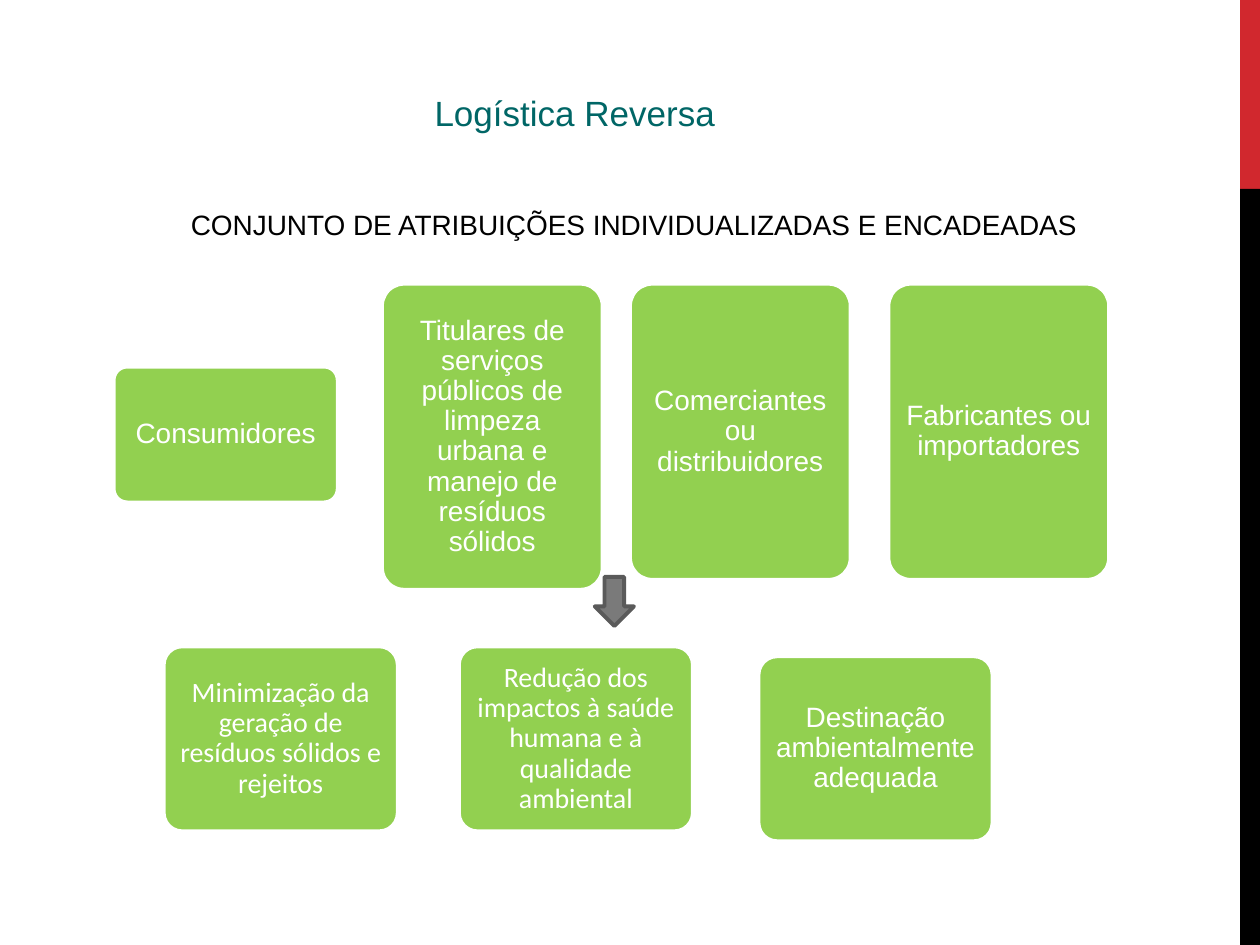
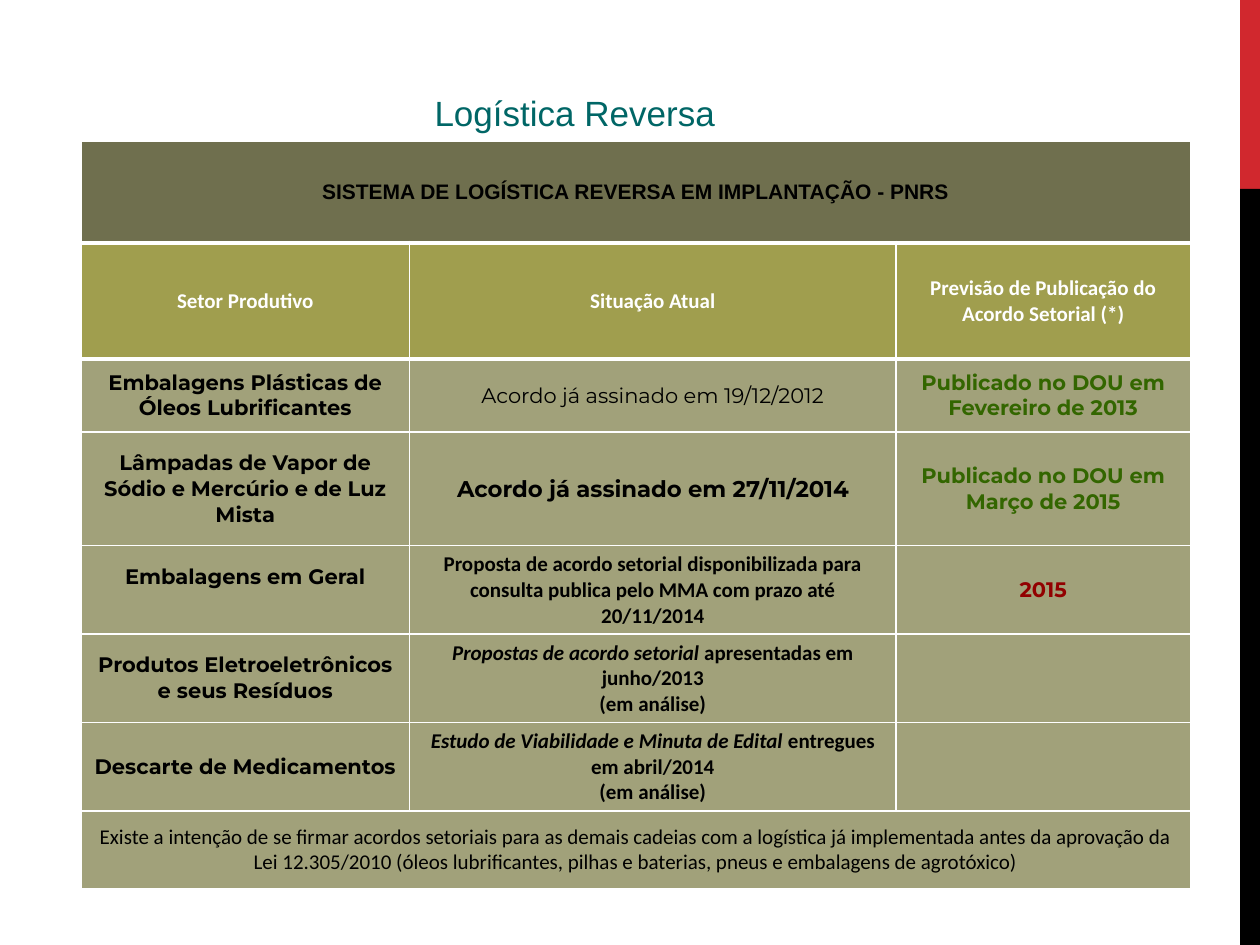
from dataclasses import dataclass

from lxml.etree import SubElement
from pptx import Presentation
from pptx.dml.color import RGBColor
from pptx.enum.shapes import MSO_SHAPE
from pptx.enum.text import MSO_ANCHOR, PP_ALIGN
from pptx.oxml.ns import qn
from pptx.presentation import Presentation as Deck
from pptx.slide import Slide
from pptx.util import Cm, Pt

WHITE = RGBColor(0xFF, 0xFF, 0xFF)
BLACK = RGBColor(0x00, 0x00, 0x00)
RED = RGBColor(0xD1, 0x28, 0x2E)
TEAL = RGBColor(0x00, 0x66, 0x66)
LIME = RGBColor(0x92, 0xD0, 0x50)
ARROW_GREY = RGBColor(0x7A, 0x7A, 0x7A)
ARROW_EDGE = RGBColor(0x5A, 0x5A, 0x5A)
BANNER = RGBColor(0x6F, 0x6F, 0x4E)
HEADER = RGBColor(0xA0, 0x9E, 0x4E)
BODY = RGBColor(0xA1, 0xA1, 0x7A)
PUBLISHED = RGBColor(0x33, 0x66, 0x00)
PENDING = RGBColor(0x92, 0x00, 0x00)

ARIAL, CALIBRI, MONTSERRAT = "Arial", "Calibri", "Montserrat"
SLIDE_WIDTH, SLIDE_HEIGHT = 25.4, 19.05
BAND_LEFT, BAND_SPLIT = 25, 3.81


@dataclass(frozen=True)
class Area:
    """A rectangle in centimetres."""

    left: float
    top: float
    width: float
    height: float

    def lengths(self) -> tuple:
        """Return the four lengths that python-pptx expects."""
        return Cm(self.left), Cm(self.top), Cm(self.width), Cm(self.height)


@dataclass(frozen=True)
class Span:
    """A stretch of text with its format."""

    text: str
    font: str = MONTSERRAT
    color: RGBColor = BLACK
    size: float = 12
    bold: bool = True
    italic: bool = False


@dataclass(frozen=True)
class Card:
    """A green rounded card."""

    area: Area
    text: str
    font: str = ARIAL


@dataclass(frozen=True)
class Entry:
    """A table cell: paragraphs made of spans, and its bottom margin."""

    paras: tuple = ()
    bottom: float = 0.13


CHAIN_TOP, CHAIN_WIDTH, CHAIN_HEIGHT = 5.72, 4.45, 5.97
RESULT_TOP, RESULT_WIDTH, RESULT_HEIGHT = 13.03, 4.72, 3.73

CARDS = (
    Card(Area(2.29, 7.39, 4.52, 2.74), "Consumidores"),
    Card(
        Area(7.7, CHAIN_TOP, CHAIN_WIDTH, 6.17),
        "Titulares de serviços públicos de limpeza urbana e manejo de resíduos sólidos",
    ),
    Card(Area(12.7, CHAIN_TOP, CHAIN_WIDTH, CHAIN_HEIGHT), "Comerciantes ou distribuidores"),
    Card(Area(17.91, CHAIN_TOP, CHAIN_WIDTH, CHAIN_HEIGHT), "Fabricantes ou importadores"),
    Card(
        Area(3.3, RESULT_TOP, RESULT_WIDTH, RESULT_HEIGHT),
        "Minimização da geração de resíduos sólidos e rejeitos",
        CALIBRI,
    ),
    Card(
        Area(9.25, RESULT_TOP, RESULT_WIDTH, RESULT_HEIGHT),
        "Redução dos impactos à saúde humana e à qualidade ambiental",
        CALIBRI,
    ),
    Card(
        Area(15.29, RESULT_TOP + 0.2, RESULT_WIDTH, RESULT_HEIGHT),
        "Destinação ambientalmente adequada",
    ),
)


def single(text: str, bottom: float = 0.13, **style) -> Entry:
    """Return a cell entry with one span."""
    return Entry(((Span(text, **style),),), bottom)


def analysis(subject: str, rest: str) -> Entry:
    """Return the status of a sector that is still being analysed."""
    return Entry((
        (Span(subject, CALIBRI, italic=True), Span(rest, CALIBRI)),
        (Span("(em análise)", CALIBRI),),
    ))


COLUMN_WIDTHS = (6.63, 9.8, 5.94)
ROW_HEIGHTS = (2.06, 2.34, 1.47, 2.29, 1.78, 1.78, 1.78, 1.57)
ROW_FILLS = (BANNER, HEADER) + (BODY,) * 6
RULE_WIDTHS = (1, 3, 3, 1, 1, 1, 1, 1, 1)
ROWS = (
    (single("SISTEMA DE LOGÍSTICA REVERSA EM IMPLANTAÇÃO - PNRS", font=ARIAL),),
    tuple(
        single(label, font=CALIBRI, color=WHITE)
        for label in (
            "Setor Produtivo",
            "Situação Atual",
            "Previsão de Publicação do Acordo Setorial (*)",
        )
    ),
    (
        single("Embalagens Plásticas de Óleos Lubrificantes"),
        single("Acordo já assinado em 19/12/2012", bold=False),
        single("Publicado no DOU em Fevereiro de 2013", color=PUBLISHED),
    ),
    (
        single("Lâmpadas de Vapor de Sódio e Mercúrio e de Luz Mista"),
        single("Acordo já assinado em 27/11/2014", size=13),
        single("Publicado no DOU em Março de 2015", color=PUBLISHED),
    ),
    (
        single("Embalagens em Geral", bottom=0.65),
        single(
            "Proposta de acordo setorial disponibilizada para consulta publica "
            "pelo MMA com prazo até 20/11/2014",
            font=CALIBRI,
        ),
        single("2015", color=PENDING),
    ),
    (
        single("Produtos Eletroeletrônicos e seus Resíduos"),
        analysis("Propostas de acordo setorial ", "apresentadas em junho/2013"),
        Entry(),
    ),
    (
        single("Descarte de Medicamentos"),
        analysis("Estudo de Viabilidade e Minuta de Edital ", "entregues em abril/2014"),
        Entry(),
    ),
    (
        single(
            "Existe a intenção de se firmar acordos setoriais para as demais cadeias com a "
            "logística já implementada antes da aprovação da Lei 12.305/2010 (óleos "
            "lubrificantes, pilhas e baterias, pneus e embalagens de agrotóxico)",
            font=CALIBRI,
            bold=False,
        ),
    ),
)


def write(para, spans: tuple, align=PP_ALIGN.CENTER) -> None:
    """Fill a paragraph with formatted spans."""
    para.alignment = align
    for span in spans:
        run = para.add_run()
        run.text = span.text
        run.font.name = span.font
        run.font.size = Pt(span.size)
        run.font.bold = span.bold
        run.font.italic = span.italic
        run.font.color.rgb = span.color


def add_form(slide: Slide, kind, area: Area, fill: RGBColor, edge: RGBColor | None = None):
    """Draw a flat preset shape, with an outline if an edge colour is given."""
    shape = slide.shapes.add_shape(kind, *area.lengths())
    shape.shadow.inherit = False
    shape.fill.solid()
    shape.fill.fore_color.rgb = fill
    if edge is None:
        shape.line.fill.background()
    else:
        shape.line.color.rgb = edge
        shape.line.width = Pt(2.25)
    return shape


def add_label(slide: Slide, area: Area, span: Span, align, wrap: bool) -> None:
    """Draw a line of text."""
    box = slide.shapes.add_textbox(*area.lengths())
    box.text_frame.word_wrap = wrap
    write(box.text_frame.paragraphs[0], (span,), align)


def add_card(slide: Slide, card: Card) -> None:
    """Draw a rounded card with centred text."""
    shape = add_form(slide, MSO_SHAPE.ROUNDED_RECTANGLE, card.area, LIME, WHITE)
    shape.adjustments[0] = 0.1
    frame = shape.text_frame
    frame.word_wrap = True
    frame.vertical_anchor = MSO_ANCHOR.MIDDLE
    frame.margin_left = frame.margin_right = Cm(0.18)
    frame.margin_top = frame.margin_bottom = Cm(0.18)
    para = frame.paragraphs[0]
    para.line_spacing = 0.9
    write(para, (Span(card.text, card.font, WHITE, 16, False),))


def add_borders(cell, top: float, bottom: float) -> None:
    """Give a cell white borders, with the top and bottom widths in points."""
    properties = cell._tc.get_or_add_tcPr()
    for side, width in (("L", 1), ("R", 1), ("T", top), ("B", bottom)):
        line = SubElement(properties, qn(f"a:ln{side}"), w=str(Pt(width)))
        SubElement(SubElement(line, qn("a:solidFill")), qn("a:srgbClr"), val=str(WHITE))


def fill_cell(cell, entry: Entry) -> None:
    """Write an entry into a table cell."""
    cell.vertical_anchor = MSO_ANCHOR.MIDDLE
    cell.margin_bottom = Cm(entry.bottom)
    frame = cell.text_frame
    for index, spans in enumerate(entry.paras):
        write(frame.add_paragraph() if index else frame.paragraphs[0], spans)


def add_sector_table(slide: Slide) -> None:
    """Draw the table of sector agreements."""
    area = Area(1.63, 2.84, sum(COLUMN_WIDTHS), sum(ROW_HEIGHTS))
    table = slide.shapes.add_table(len(ROWS), len(COLUMN_WIDTHS), *area.lengths()).table
    for column, width in zip(table.columns, COLUMN_WIDTHS):
        column.width = Cm(width)
    for index, entries in enumerate(ROWS):
        row = table.rows[index]
        row.height = Cm(ROW_HEIGHTS[index])
        for cell in row.cells:
            add_borders(cell, RULE_WIDTHS[index], RULE_WIDTHS[index + 1])
            cell.fill.solid()
            cell.fill.fore_color.rgb = ROW_FILLS[index]
        if len(entries) == 1:
            table.cell(index, 0).merge(table.cell(index, len(COLUMN_WIDTHS) - 1))
        for cell, entry in zip(row.cells, entries):
            fill_cell(cell, entry)


def add_page(deck: Deck) -> Slide:
    """Add a page with the side bands and the title."""
    page = deck.slides.add_slide(deck.slide_layouts[6])
    width = SLIDE_WIDTH - BAND_LEFT
    add_form(page, MSO_SHAPE.RECTANGLE, Area(BAND_LEFT, 0, width, BAND_SPLIT), RED)
    lower = Area(BAND_LEFT, BAND_SPLIT, width, SLIDE_HEIGHT - BAND_SPLIT)
    add_form(page, MSO_SHAPE.RECTANGLE, lower, BLACK)
    title = Span("Logística Reversa", ARIAL, TEAL, 20, False)
    add_label(page, Area(8.51, 1.73, 6.4, 1.12), title, PP_ALIGN.LEFT, False)
    return page


def build_chain(deck: Deck) -> None:
    """Build the page of linked responsibilities."""
    page = add_page(deck)
    for card in CARDS:
        add_card(page, card)
    heading = Span(
        "CONJUNTO DE ATRIBUIÇÕES INDIVIDUALIZADAS E ENCADEADAS", ARIAL, BLACK, 16, False
    )
    add_label(page, Area(2.69, 4.06, 20.19, 0.94), heading, PP_ALIGN.CENTER, True)
    add_form(page, MSO_SHAPE.DOWN_ARROW, Area(11.99, 11.63, 0.79, 0.99), ARROW_GREY, ARROW_EDGE)


def main() -> None:
    """Build and save the deck."""
    deck = Presentation()
    deck.slide_width, deck.slide_height = Cm(SLIDE_WIDTH), Cm(SLIDE_HEIGHT)
    build_chain(deck)
    add_sector_table(add_page(deck))
    deck.save("out.pptx")


if __name__ == "__main__":
    main()
